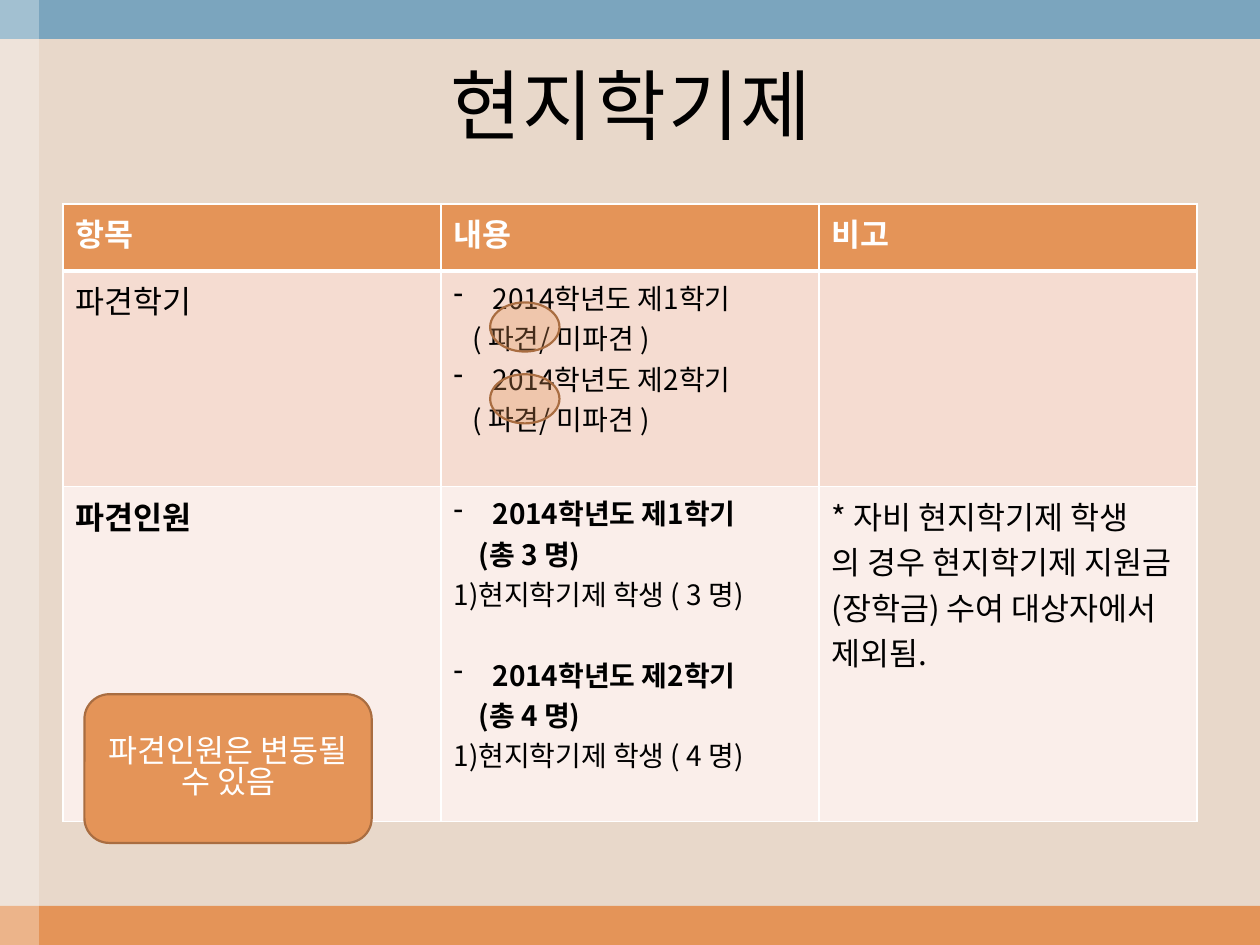
from dataclasses import dataclass

from lxml import etree
from pptx import Presentation
from pptx.dml.color import RGBColor
from pptx.enum import shapes, text
from pptx.oxml import ns
from pptx.util import Inches, Pt


@dataclass(frozen=True)
class Theme:
    sand: str = "E8D8CA"
    orange: str = "E49458"
    brown: str = "A96D41"
    blue: str = "7BA5BE"
    white: str = "FFFFFF"
    black: str = "000000"
    row_fills: tuple = ("E49458", "F5DCD1", "FAEEEA")
    font: str = "Noto Sans CJK KR"
    heading_font: str = "TeX Gyre Schola"
    title_size: int = 44
    text_size: int = 18
    list_size: int = 16


theme = Theme()


def add_span(para, words, size, color, bold=False, latin=theme.font):
    span = para.add_run()
    span.text = words
    span.font.size = Pt(size)
    span.font.bold = bold
    span.font.name = latin
    span.font.color.rgb = RGBColor.from_string(color)
    etree.SubElement(span.font._element, ns.qn("a:ea"), typeface=theme.font)
    return span


def add_panel(kind, left, top, width, height, fill, alpha=100, line=None):
    """Add a filled shape; alpha is its opacity in percent."""
    panel = slide.shapes.add_shape(
        kind, Inches(left), Inches(top), Inches(width), Inches(height))
    panel.shadow.inherit = False
    panel.fill.solid()
    panel.fill.fore_color.rgb = RGBColor.from_string(fill)
    if alpha < 100:
        color = panel._element.spPr.find(".//" + ns.qn("a:srgbClr"))
        etree.SubElement(color, ns.qn("a:alpha"), val=str(alpha * 1000))
    if line:
        panel.line.color.rgb = RGBColor.from_string(line)
        panel.line.width = Pt(1.25)
    else:
        panel.line.fill.background()
    return panel


deck = Presentation()
deck.slide_width, deck.slide_height = Inches(10), Inches(7.5)
slide = deck.slides.add_slide(deck.slide_layouts[5])
slide.background.fill.solid()
slide.background.fill.fore_color.rgb = RGBColor.from_string(theme.sand)

# Edge bands
rectangle = shapes.MSO_SHAPE.RECTANGLE
add_panel(rectangle, 0, 7.19, 10, 0.31, theme.orange)
add_panel(rectangle, 0, 0, 10, 0.31, theme.blue)
add_panel(rectangle, 0, 0, 0.31, 7.5, theme.white, alpha=30)

# Title
title = slide.shapes.title
title.left, title.top = Inches(0.33), Inches(0.31)
title.width, title.height = Inches(9.36), Inches(1.03)
title.text_frame.vertical_anchor = text.MSO_ANCHOR.MIDDLE
para = title.text_frame.paragraphs[0]
para.alignment = text.PP_ALIGN.CENTER
span = add_span(para, "현지학기제", theme.title_size, theme.black)
span.font._element.set("spc", "100")

# Table: a list line is (words, bold, left indent, dash, space before)
semester_lines = [
    line
    for term in (1, 2)
    for line in (
        (f"2014학년도 제{term}학기", False, 0.31, True, 0),
        ("( 파견/ 미파견 )", False, 0.15, False, 0),
    )
]
headcount_lines = [
    line
    for term, count, gap in ((1, 3, 0), (2, 4, 23))
    for line in (
        (f"2014학년도 제{term}학기", True, 0.31, True, gap),
        (f"(총 {count} 명)", True, 0.2, False, 0),
        (f"1)현지학기제 학생 ( {count} 명)", False, 0, False, 0),
    )
]
remark = ("* 자비 현지학기제 학생\v의 경우 현지학기제 지원금(장학금) 수여 "
          "대상자에서 제외됨.")
rows = [
    ["항목", "내용", "비고"],
    ["파견학기", semester_lines, ""],
    ["파견인원", headcount_lines, remark],
]
row_heights = [0.53, 1.71, 2.66]

table = slide.shapes.add_table(
    3, 3, Inches(0.5), Inches(1.62), Inches(9), Inches(sum(row_heights))).table
for column in table.columns:
    column.width = Inches(3)
for r, (contents, height) in enumerate(zip(rows, row_heights)):
    table.rows[r].height = Inches(height)
    for c, content in enumerate(contents):
        cell = table.cell(r, c)
        frame = cell.text_frame
        if isinstance(content, list):
            for i, (words, bold, indent, dash, gap) in enumerate(content):
                para = frame.paragraphs[0] if i == 0 else frame.add_paragraph()
                para.space_before = Pt(gap)
                settings = para._p.get_or_add_pPr()
                settings.set("marL", str(Inches(indent)))
                settings.set("indent", str(-Inches(indent) if dash else 0))
                if dash:
                    etree.SubElement(settings, ns.qn("a:buChar"), char="-")
                add_span(para, words, theme.list_size, theme.black, bold)
        elif content:
            para = frame.paragraphs[0]
            color = theme.black if r else theme.white
            bold = r == 0 or content == "파견인원"
            latin = theme.heading_font if r == 0 and c else theme.font
            for i, words in enumerate(content.split("\v")):
                if i:
                    para.add_line_break()
                add_span(para, words, theme.text_size, color, bold, latin)

        # Borders come before the fill in the cell properties
        for side in ("lnL", "lnR", "lnT", "lnB"):
            heavy = (r, side) in ((0, "lnB"), (1, "lnT"))
            border = etree.SubElement(
                cell._tc.get_or_add_tcPr(), ns.qn(f"a:{side}"),
                w=str(Pt(3 if heavy else 1)))
            paint = etree.SubElement(border, ns.qn("a:solidFill"))
            etree.SubElement(paint, ns.qn("a:srgbClr"), val=theme.white)
        cell.fill.solid()
        cell.fill.fore_color.rgb = RGBColor.from_string(theme.row_fills[r])

# Rings marking the chosen option
for top in (2.97, 2.4):
    add_panel(shapes.MSO_SHAPE.OVAL, 3.89, top, 0.55, 0.39,
              theme.orange, alpha=30, line=theme.brown)

# Note
note = add_panel(shapes.MSO_SHAPE.ROUNDED_RECTANGLE, 0.67, 5.51, 2.28, 1.18,
                 theme.orange, line=theme.brown)
note.text_frame.word_wrap = True
note.text_frame.vertical_anchor = text.MSO_ANCHOR.MIDDLE
para = note.text_frame.paragraphs[0]
para.alignment = text.PP_ALIGN.CENTER
para.line_spacing = 0.83
add_span(para, "파견인원은 변동될 수 있음", theme.text_size, theme.white)

deck.save("out.pptx")
